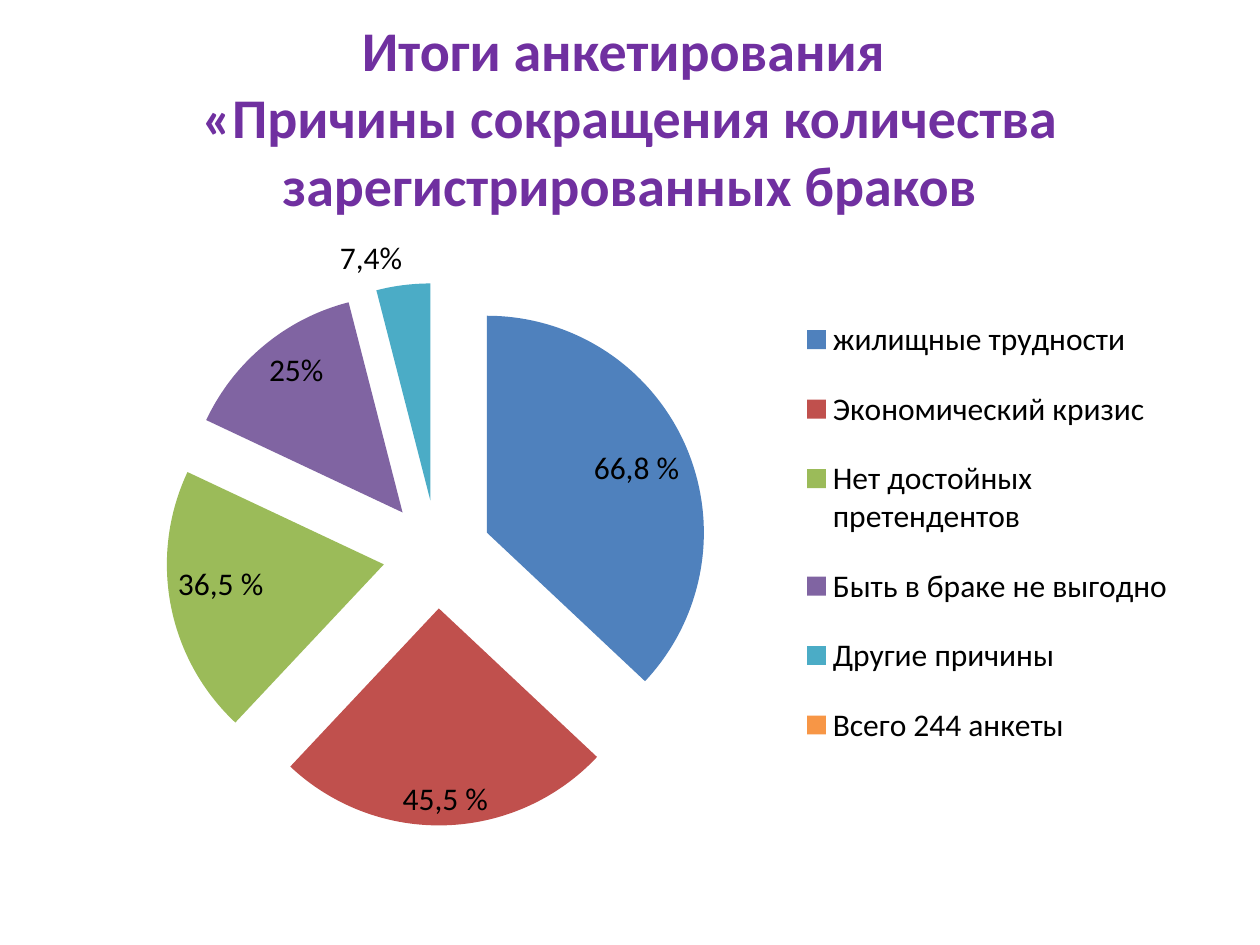
from lxml.etree import SubElement
from pptx import Presentation
from pptx.chart.data import CategoryChartData
from pptx.dml.color import RGBColor
from pptx.enum.chart import XL_CHART_TYPE, XL_LABEL_POSITION, XL_LEGEND_POSITION
from pptx.enum.text import MSO_ANCHOR, PP_ALIGN
from pptx.oxml import parse_xml
from pptx.oxml.ns import nsdecls, qn
from pptx.util import Cm, Pt

FONT = "Calibri"
PURPLE = RGBColor(0x70, 0x30, 0xA0)
BLACK = RGBColor(0, 0, 0)
INSIDE, OUTSIDE = XL_LABEL_POSITION.INSIDE_END, XL_LABEL_POSITION.OUTSIDE_END

# category, value, label, label position, colour
REASONS = [
    ("жилищные трудности", 37, "66,8 %", INSIDE, RGBColor(0x4F, 0x81, 0xBD)),
    ("Экономический кризис", 25, "45,5 %", INSIDE, RGBColor(0xC0, 0x50, 0x4D)),
    ("Нет достойных претендентов", 20, "36,5 %", INSIDE, RGBColor(0x9B, 0xBB, 0x59)),
    ("Быть в браке не выгодно", 14, "25%", INSIDE, RGBColor(0x80, 0x64, 0xA2)),
    ("Другие причины", 4, "7,4%", OUTSIDE, RGBColor(0x4B, 0xAC, 0xC6)),
    ("Всего 244 анкеты", None, None, None, RGBColor(0xF7, 0x96, 0x46)),
]


def format_font(font, size=18, color=BLACK, bold=False):
    font.name, font.size, font.bold = FONT, Pt(size), bold
    font.color.rgb = color


def write_text(tf, text, align=PP_ALIGN.CENTER, **font):
    p = tf.paragraphs[0]
    p.text = text
    p.alignment = align
    for r in p.runs:
        format_font(r.font, **font)


def set_layout(element, x, y, w, h, inner=False):
    """Place a chart part by fractions of the chart's box."""
    layout = element.find(qn("c:layout"))
    if layout is None:
        layout = parse_xml(f"<c:layout {nsdecls('c')}/>")
        index = 0 if inner else 1
        element.insert(index, layout)
    manual = SubElement(layout, qn("c:manualLayout"))
    values = [("xMode", "edge"), ("yMode", "edge"),
              ("x", x), ("y", y), ("w", w), ("h", h)]
    if inner:
        values.insert(0, ("layoutTarget", "inner"))
    for name, value in values:
        SubElement(manual, qn(f"c:{name}")).set("val", str(value))


def add_title(s, left, top, width, height):
    title = s.shapes.title
    title.left, title.top, title.width, title.height = left, top, width, height
    title.text_frame.vertical_anchor = MSO_ANCHOR.MIDDLE
    write_text(title.text_frame,
               "Итоги анкетирования \v«Причины сокращения количества "
               "зарегистрированных браков",
               size=32, color=PURPLE, bold=True)


def add_reasons_pie(s, left, top, width, height):
    data = CategoryChartData()
    data.categories = [reason[0] for reason in REASONS]
    data.add_series("Series 1", [reason[1] for reason in REASONS])
    chart = s.shapes.add_chart(XL_CHART_TYPE.PIE, left, top, width, height, data).chart
    chart.has_title = False
    format_font(chart.font)

    plot = chart.plots[0]
    plot.vary_by_categories = True
    series = plot.series[0]
    for i, (_, _, label, position, color) in enumerate(REASONS):
        point = series.points[i]
        fill = point.format.fill
        fill.solid()
        fill.fore_color.rgb = color
        if label:
            write_text(point.data_label.text_frame, label)
            point.data_label.position = position
    series.data_labels.show_value = False
    explosion = parse_xml(f'<c:explosion {nsdecls("c")} val="25"/>')
    series.points[0].format  # the first point exists before the insertion
    series._element.find(qn("c:dPt")).addprevious(explosion)

    chart.has_legend = True
    legend = chart.legend
    legend.position = XL_LEGEND_POSITION.RIGHT
    legend.include_in_layout = False
    format_font(legend.font)
    set_layout(legend._element, 0.64, 0.11, 0.35, 0.78)
    set_layout(plot._element.getparent(), 0.09, 0.1, 0.48, 0.87, inner=True)


def main():
    prs = Presentation()
    prs.slide_width, prs.slide_height = Cm(25.4), Cm(19.05)
    s = prs.slides.add_slide(prs.slide_layouts[5])
    margin = Cm(1.27)
    width = prs.slide_width - 2 * margin
    add_title(s, margin, Cm(0.76), width, Cm(3.18))
    add_reasons_pie(s, margin, Cm(4.45), width, Cm(12.57))
    prs.save("out.pptx")


if __name__ == "__main__":
    main()
